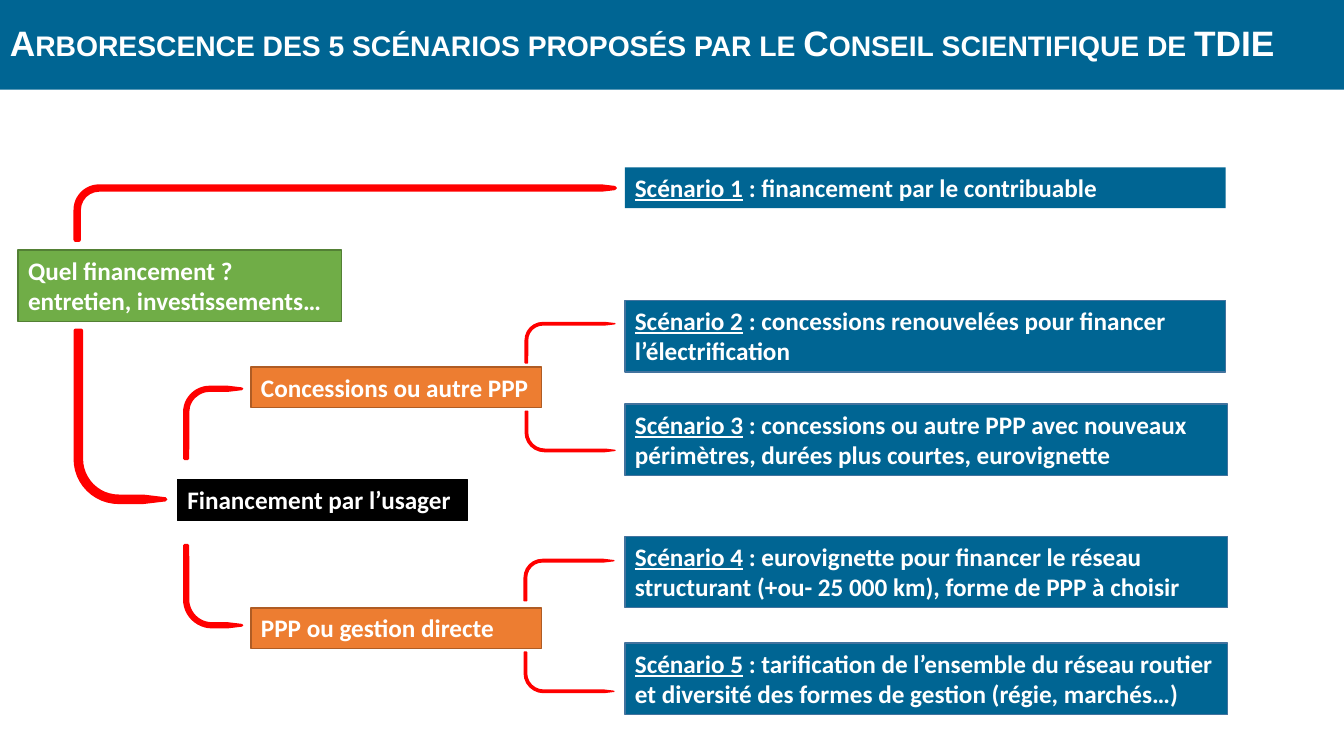
from pptx import Presentation
from pptx.dml.color import RGBColor
from pptx.enum.shapes import MSO_SHAPE
from pptx.enum.text import MSO_ANCHOR, MSO_AUTO_SIZE, PP_ALIGN
from pptx.util import Inches, Pt

THEME = {
    "blue": "006593", "blue edge": "43739E",
    "green": "70AD47", "green edge": "538035",
    "orange": "ED7D31", "orange edge": "AF5C24",
    "black": "000000", "red": "FF0000", "white": "FFFFFF",
    "title font": "Arial", "title size": 25.2,
    "body font": "Calibri", "body size": 18,
}

deck = Presentation()
deck.slide_width, deck.slide_height = Inches(13.333), Inches(7.5)
page = deck.slides.add_slide(deck.slide_layouts[6])
CELL = deck.slide_height / 75
COLUMNS = deck.slide_width / CELL
ONE_LINE, TWO_LINES = 4.05, 7.1


def add_figure(kind, place, fill, edge=None, weight=1):
    figure = page.shapes.add_shape(kind, *[round(cells * CELL) for cells in place])
    figure.shadow.inherit = False
    figure.fill.solid()
    figure.fill.fore_color.rgb = RGBColor.from_string(THEME[fill])
    if edge:
        figure.line.color.rgb = RGBColor.from_string(THEME[edge])
        figure.line.width = Pt(weight)
    else:
        figure.line.fill.background()
    return figure


def add_span(para, text, role, underline=False):
    span = para.add_run()
    span.text = text
    formats = {"name": THEME[role + " font"], "size": Pt(THEME[role + " size"]),
               "bold": True, "underline": underline}
    for name, value in formats.items():
        setattr(span.font, name, value)
    span.font.color.rgb = RGBColor.from_string(THEME["white"])
    return span


banner = add_figure(MSO_SHAPE.RECTANGLE, (0, 0, COLUMNS, 8.9), "blue")
banner.text_frame.word_wrap = True
banner.text_frame.vertical_anchor = MSO_ANCHOR.MIDDLE
heading = banner.text_frame.paragraphs[0]
heading.alignment = PP_ALIGN.LEFT
heading.line_spacing = 0.9
title = add_span(heading, "Arborescence des 5 scénarios proposés par le Conseil scientifique de TDIE", "title")
title.font._element.set("cap", "small")

boxes = [
    (1.8, 24.8, 32.1, TWO_LINES, "green", "green edge",
     ["Quel financement ?", "entretien, investissements…"]),
    (17.6, 47.6, 28.8, ONE_LINE, "black", "black", ["Financement par l’usager"]),
    (24.9, 36.4, 28.8, ONE_LINE, "orange", "orange edge", ["Concessions ou autre PPP"]),
    (24.9, 60.3, 28.8, ONE_LINE, "orange", "orange edge", ["PPP ou gestion directe"]),
]
scenarios = [
    (16.6, 59.6, ONE_LINE, None, "financement par le contribuable"),
    (29.8, 59.6, TWO_LINES, "blue edge", "concessions renouvelées pour financer l’électrification"),
    (40.1, 59.8, TWO_LINES, "blue edge",
     "concessions ou autre PPP avec nouveaux périmètres, durées plus courtes, eurovignette"),
    (53.2, 59.8, TWO_LINES, "blue edge",
     "eurovignette pour financer le réseau structurant (+ou- 25 000 km), forme de PPP à choisir"),
    (63.8, 59.8, TWO_LINES, "blue edge",
     "tarification de l’ensemble du réseau routier et diversité des formes de gestion (régie, marchés…)"),
]
for number, (top, width, height, edge, text) in enumerate(scenarios, 1):
    boxes.append((62, top, width, height, "blue", edge, [f"Scénario {number} : {text}"]))

for left, top, width, height, fill, edge, lines in boxes:
    box = add_figure(MSO_SHAPE.RECTANGLE, (left, top, width, height), fill, edge)
    frame = box.text_frame
    for name, value in {"word_wrap": True, "vertical_anchor": MSO_ANCHOR.TOP,
                        "auto_size": MSO_AUTO_SIZE.SHAPE_TO_FIT_TEXT}.items():
        setattr(frame, name, value)
    for index, line in enumerate(lines):
        para = frame.add_paragraph() if index else frame.paragraphs[0]
        para.alignment = PP_ALIGN.LEFT
        label, colon, rest = line.partition(" : ")
        add_span(para, label, "body", underline=bool(colon))
        if colon:
            add_span(para, colon + rest, "body")

arrows = [
    (7.5, 18.5, 53.5, 5.3, "up", 3),
    (7.5, 32.8, 8.9, 17, "down", 3),
    (18.3, 38.4, 5.7, 7.1, "up", 2),
    (18.3, 54.1, 5.7, 8.1, "down", 2),
    (52.1, 32, 8.9, 4, "up", 1),
    (52.1, 40.8, 8.9, 4, "down", 1),
    (52, 55.5, 8.9, 4.1, "up", 1),
    (52, 64.7, 8.9, 4, "down", 1),
]
for *place, direction, weight in arrows:
    arrow = add_figure(MSO_SHAPE.BENT_ARROW, place, "red", "red", weight)
    bend = 0.44 if direction == "up" else 0.48
    for index, share in enumerate((0.25, 0.03, 0.25, bend)):
        arrow.adjustments[index] = share
    if direction == "down":
        arrow.rotation = 180
        arrow.element.spPr.get_or_add_xfrm().set("flipH", "1")

deck.save("out.pptx")
